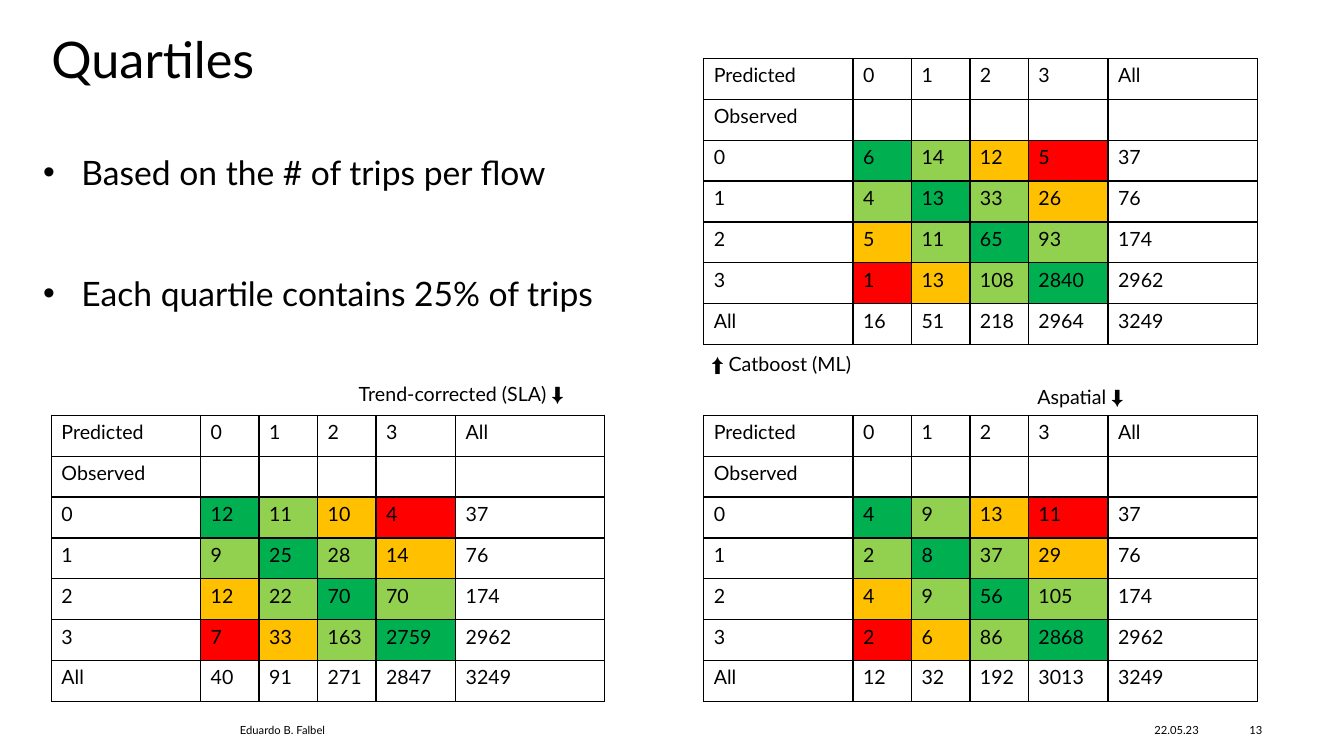
from dataclasses import dataclass

from lxml.etree import SubElement as Sub
from pptx import Presentation
from pptx.dml.color import RGBColor
from pptx.enum.text import MSO_ANCHOR as Anchor, PP_ALIGN as Align
from pptx.oxml.ns import qn
from pptx.slide import Slide
from pptx.table import _Cell as Cell
from pptx.text.text import _Paragraph as Paragraph
from pptx.util import Inches, Pt

COLORS = {
    "ink": "000000",
    "exact": "00B050",
    "off_by_one": "92D050",
    "off_by_two": "FFC000",
    "off_by_three": "FF0000",
}
ERROR_COLORS = ("exact", "off_by_one", "off_by_two", "off_by_three")
COLUMN_WIDTHS = (1.48, 0.58, 0.58, 0.58, 0.79, 1.48)
TABLE_HEIGHT = 2.84
PADDED = (0.1, 0.05)
TIGHT = (0, 0)


@dataclass(frozen=True)
class Label:
    lines: tuple[str, ...]
    left: float
    top: float
    width: float
    height: float
    size: float
    padding: tuple[float, float] = PADDED
    anchor: Anchor = Anchor.TOP
    align: Align = Align.LEFT
    bulleted: bool = False


@dataclass(frozen=True)
class QuartileMatrix:
    left: float
    top: float
    trips: tuple[tuple[int, ...], ...]


LABELS = (
    Label(("22.05.23",), 11.45, 7.13, 0.66, 0.23, 8, TIGHT, Anchor.MIDDLE),
    Label(("13",), 12.18, 7.13, 0.34, 0.23, 8, TIGHT, Anchor.MIDDLE, Align.RIGHT),
    Label(("Eduardo B. Falbel",), 2.38, 7.13, 5.9, 0.23, 8, TIGHT, Anchor.MIDDLE),
    Label(("Quartiles",), 0.51, 0.28, 12.01, 0.98, 36, TIGHT),
    Label(("⬆️ Catboost (ML)",), 6.96, 3.44, 1.79, 0.34, 14),
    Label(("Aspatial ⬇️",), 10.19, 3.77, 2.16, 0.34, 14),
    Label(("Trend-corrected (SLA) ⬇️",), 3.46, 3.74, 2.54, 0.34, 14),
    Label(
        ("Based on the # of trips per flow", "Each quartile contains 25% of trips"),
        0.33, 1.26, 5.85, 1.84, 24, bulleted=True,
    ),
)

MATRICES = (
    QuartileMatrix(6.98, 0.58, ((6, 14, 12, 5), (4, 13, 33, 26), (5, 11, 65, 93), (1, 13, 108, 2840))),
    QuartileMatrix(6.98, 4.12, ((4, 9, 13, 11), (2, 8, 37, 29), (4, 9, 56, 105), (2, 6, 86, 2868))),
    QuartileMatrix(0.51, 4.12, ((12, 11, 10, 4), (9, 25, 28, 14), (12, 22, 70, 70), (7, 33, 163, 2759))),
)


def apply_format(target: object, values: dict[str, object]) -> None:
    for attribute, value in values.items():
        setattr(target, attribute, value)


def write(paragraph: Paragraph, wording: str, size: float) -> None:
    run = paragraph.add_run()
    run.text = wording
    apply_format(run.font, {"name": "Lato", "size": Pt(size)})
    run.font.color.rgb = RGBColor.from_string(COLORS["ink"])


def add_bullet(paragraph: Paragraph) -> None:
    properties = paragraph._p.get_or_add_pPr()
    properties.set("marL", str(Inches(0.38)))
    properties.set("indent", str(Inches(-0.38)))
    bullet_color = Sub(properties, qn("a:buClr"))
    Sub(bullet_color, qn("a:srgbClr"), val=COLORS["ink"])
    Sub(properties, qn("a:buFont"), typeface="Arial")
    Sub(properties, qn("a:buChar"), char="•")
    paragraph.line_spacing = 1.5


def draw_label(slide: Slide, label: Label) -> None:
    bounds = (label.left, label.top, label.width, label.height)
    frame = slide.shapes.add_textbox(*map(Inches, bounds)).text_frame
    side, end = map(Inches, label.padding)
    apply_format(frame, {
        "word_wrap": True,
        "vertical_anchor": label.anchor,
        "margin_left": side,
        "margin_right": side,
        "margin_top": end,
        "margin_bottom": end,
    })
    for index, line in enumerate(label.lines):
        paragraph = frame.add_paragraph() if index else frame.paragraphs[0]
        paragraph.alignment = label.align
        if label.bulleted:
            add_bullet(paragraph)
        if index:
            paragraph.space_before = Pt(43.2)
        write(paragraph, line, label.size)


def add_borders(cell: Cell) -> None:
    properties = cell._tc.get_or_add_tcPr()
    for edge in ("lnL", "lnR", "lnT", "lnB"):
        border = Sub(properties, qn(f"a:{edge}"), w=str(Pt(1)))
        Sub(Sub(border, qn("a:solidFill")), qn("a:srgbClr"), val=COLORS["ink"])


def with_totals(trips: tuple[tuple[int, ...], ...]) -> list[list[object]]:
    quartiles = range(len(trips))
    observed = [[quartile, *row, sum(row)] for quartile, row in zip(quartiles, trips)]
    predicted_totals = [sum(column) for column in zip(*trips)]
    return [
        ["Predicted", *quartiles, "All"],
        ["Observed"] + [""] * (len(trips) + 1),
        *observed,
        ["All", *predicted_totals, sum(predicted_totals)],
    ]


def draw_matrix(slide: Slide, matrix: QuartileMatrix) -> None:
    rows = with_totals(matrix.trips)
    bounds = (matrix.left, matrix.top, sum(COLUMN_WIDTHS), TABLE_HEIGHT)
    table = slide.shapes.add_table(len(rows), len(COLUMN_WIDTHS), *map(Inches, bounds)).table
    apply_format(table, {"first_row": False, "horz_banding": False})
    for column, width in zip(table.columns, COLUMN_WIDTHS):
        column.width = Inches(width)
    quartiles = range(len(matrix.trips))
    for row_index, row in enumerate(rows):
        for column_index, value in enumerate(row):
            cell = table.cell(row_index, column_index)
            add_borders(cell)
            observed, predicted = row_index - 2, column_index - 1
            if observed in quartiles and predicted in quartiles:
                error = abs(observed - predicted)
                cell.fill.solid()
                cell.fill.fore_color.rgb = RGBColor.from_string(COLORS[ERROR_COLORS[error]])
            else:
                cell.fill.background()
            if value != "":
                write(cell.text_frame.paragraphs[0], str(value), 14)


def main() -> None:
    deck = Presentation()
    apply_format(deck, {"slide_width": Inches(13.33), "slide_height": Inches(7.5)})
    slide = deck.slides.add_slide(deck.slide_layouts[6])
    for matrix in MATRICES:
        draw_matrix(slide, matrix)
    for label in LABELS:
        draw_label(slide, label)
    deck.save("out.pptx")


if __name__ == "__main__":
    main()
